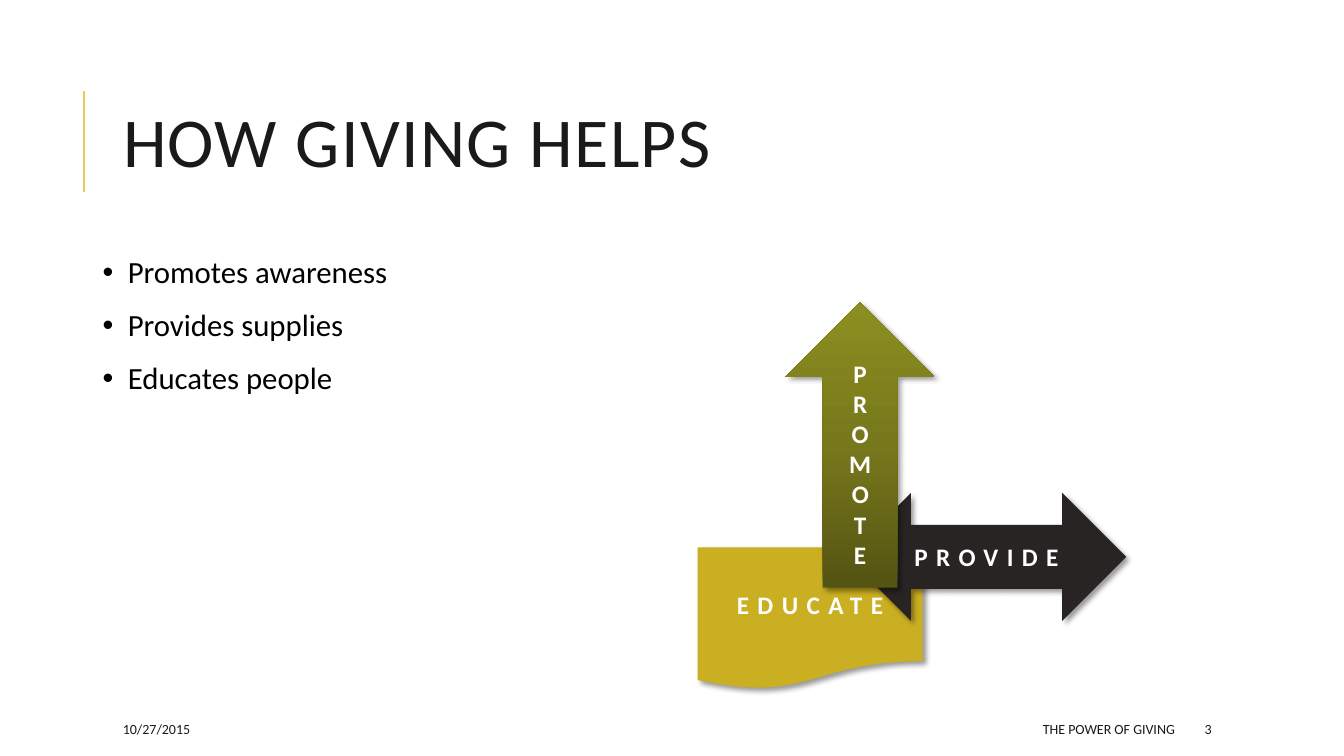
from lxml import etree
from pptx import Presentation
from pptx.dml.color import RGBColor
from pptx.enum import shapes, text
from pptx.oxml import parse_xml
from pptx.oxml.ns import qn
from pptx.util import Inches, Pt

DRAWING = 'xmlns:a="http://schemas.openxmlformats.org/drawingml/2006/main"'
INK = "1A1A1A"
LEFT, CENTER, RIGHT = text.PP_ALIGN.LEFT, text.PP_ALIGN.CENTER, text.PP_ALIGN.RIGHT


def color(value):
    return RGBColor.from_string(value)


def style(para, size, ink, align=LEFT, bold=False, spacing=0):
    para.alignment = align
    for span in para.runs:
        span.font.name = "Calibri"
        span.font.size = Pt(size)
        span.font.bold = bold
        span.font.color.rgb = color(ink)
        if spacing:
            span.font._element.set("spc", str(spacing * 100))


deck = Presentation()
deck.slide_width, deck.slide_height = Inches(13.33), Inches(7.5)
page = deck.slides.add_slide(deck.slide_layouts[5])

# Rule beside the title
rule = page.shapes.add_connector(
    shapes.MSO_CONNECTOR.STRAIGHT, Inches(0.83), Inches(1.9), Inches(0.83), Inches(0.9))
rule.line.color.rgb = color("E3CC5A")
rule.line.width = Pt(1.5)
etree.SubElement(rule._element.spPr, qn("a:effectLst"))

# Title
title = page.shapes.title
title.left, title.top, title.width, title.height = map(Inches, (1.12, 0.64, 10.63, 1.64))
title.text_frame.text = "HOW GIVING HELPS"
title.text_frame.auto_size = text.MSO_AUTO_SIZE.NONE
title.text_frame.vertical_anchor = text.MSO_ANCHOR.MIDDLE
title.text_frame.paragraphs[0].line_spacing = 0.8
style(title.text_frame.paragraphs[0], 50, INK, spacing=1)

# Bullet list
body = page.shapes.add_textbox(Inches(0.92), Inches(2.5), Inches(10.83), Inches(4.4))
body.text_frame.word_wrap = True
body.text_frame.text = "Promotes awareness\nProvides supplies\nEducates people"
for index, para in enumerate(body.text_frame.paragraphs):
    para.line_spacing = 0.9
    para.space_before = Pt(12 if index else 0)
    para.space_after = Pt(2)
    props = para._p.get_or_add_pPr()
    props.set("marL", str(Inches(0.25)))
    props.set("indent", str(Inches(-0.25)))
    props.append(parse_xml(f'<a:buFont {DRAWING} typeface="Arial"/>'))
    props.append(parse_xml(f'<a:buChar {DRAWING} char="•"/>'))
    style(para, 22, "000000")

# Footer line
for words, left, width, align in (
        ("10/27/2015", 1.12, 2.36, LEFT),
        ("THE POWER OF GIVING", 5.3, 6.45, RIGHT),
        ("3", 11.85, 1.06, LEFT)):
    box = page.shapes.add_textbox(Inches(left), Inches(7.08), Inches(width), Inches(0.3))
    box.text_frame.word_wrap = True
    box.text_frame.vertical_anchor = text.MSO_ANCHOR.MIDDLE
    box.text_frame.text = words
    style(box.text_frame.paragraphs[0], 10, INK, align)

# Promote, provide and educate shapes
KIND = shapes.MSO_SHAPE
figures = {}
for words, kind, place, fill, spacing in (
        ("EDUCATE", KIND.FLOWCHART_DOCUMENT, (6.92, 5.43, 2.23, 1.41), "CBAF22", 6),
        ("PROVIDE", KIND.LEFT_RIGHT_ARROW, (8.4, 4.89, 2.77, 1.27), "282424", 6),
        ("PROMOTE", KIND.UP_ARROW, (7.79, 3, 1.48, 2.83), "77781B", -3)):
    figure = page.shapes.add_shape(kind, *map(Inches, place))
    figure.fill.solid()
    figure.fill.fore_color.rgb = color(fill)
    figure.line.fill.background()
    figure._element.spPr.append(parse_xml(
        f'<a:effectLst {DRAWING}><a:outerShdw blurRad="{Pt(4)}" dist="{Pt(3)}" '
        f'dir="{45 * 60000}" algn="tl" rotWithShape="0"><a:srgbClr val="000000">'
        '<a:alpha val="40000"/></a:srgbClr></a:outerShdw></a:effectLst>'))
    figure.text_frame.vertical_anchor = text.MSO_ANCHOR.MIDDLE
    figure.text_frame.text = words
    style(figure.text_frame.paragraphs[0], 18, "FFFFFF", CENTER, True, spacing)
    figures[words] = figure

# Upward arrow: stacked letters and a gradient from bottom to top
promote = figures["PROMOTE"]._element
promote.txBody.find(qn("a:bodyPr")).set("vert", "wordArtVert")
stops = "".join(
    f'<a:gs pos="{position * 1000}"><a:srgbClr val="{tint}"/></a:gs>'
    for position, tint in ((0, "545413"), (50, "77781B"), (100, "8D8E21")))
solid = promote.spPr.find(qn("a:solidFill"))
promote.spPr.replace(solid, parse_xml(
    f'<a:gradFill {DRAWING} rotWithShape="1"><a:gsLst>{stops}</a:gsLst>'
    f'<a:lin ang="{270 * 60000}" scaled="0"/></a:gradFill>'))

deck.save("out.pptx")
